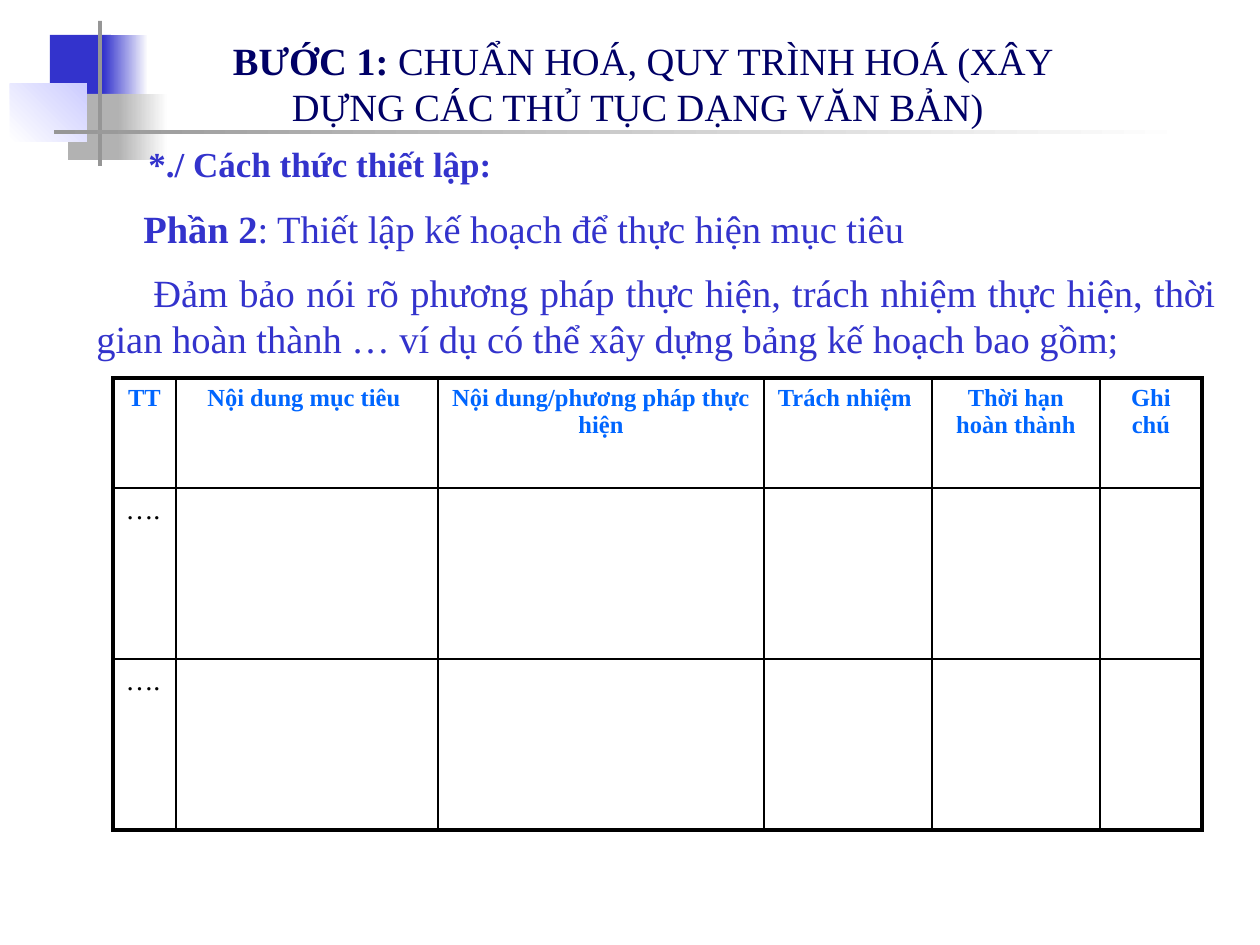
"""Builds the slide on step 1: a plan table for reaching the objectives."""
from typing import NamedTuple

from lxml import etree
from pptx import Presentation
from pptx.dml.color import RGBColor
from pptx.enum.shapes import MSO_SHAPE
from pptx.enum.text import MSO_AUTO_SIZE, PP_ALIGN
from pptx.oxml.ns import qn
from pptx.util import Emu, Pt

RECTANGLE = MSO_SHAPE.RECTANGLE
GROW = MSO_AUTO_SIZE.SHAPE_TO_FIT_TEXT
LEFT, CENTER, JUSTIFY = PP_ALIGN.LEFT, PP_ALIGN.CENTER, PP_ALIGN.JUSTIFY
FONT = "Times New Roman"
NAVY, BLUE, SKY, BLACK = "000066", "3333CC", "0066FF", "000000"
GRAY, SILVER, LAVENDER, WHITE = "969696", "B2B2B2", "CCCCFF", "FFFFFF"
THIN, THICK = Pt(1), Pt(2.25)


class Block(NamedTuple):
    left: int
    top: int
    width: int
    height: int
    start: str
    end: str = ""
    angle: int = 0


class Span(NamedTuple):
    text: str
    size: int
    color: str
    bold: bool = False


class Para(NamedTuple):
    spans: list[Span]
    align: PP_ALIGN = LEFT
    indent: int = 0
    before: int = 0


class TextBox(NamedTuple):
    left: int
    top: int
    width: int
    height: int
    paras: list[Para]
    wrap: bool = True


BLOCKS = [
    Block(50, 35, 61, 66, BLUE),
    Block(103, 35, 45, 66, BLUE, WHITE),
    Block(68, 94, 58, 66, SILVER),
    Block(118, 94, 50, 66, SILVER, WHITE),
    Block(10, 84, 77, 58, WHITE, LAVENDER, 45),
    Block(98, 21, 4, 145, GRAY),
    Block(54, 130, 1134, 4, GRAY, WHITE),
]
BODY = TextBox(84, 199, 1144, 170, [
    Para([Span("Phần 2", 22, BLUE, True),
          Span(": Thiết lập kế hoạch để thực hiện mục tiêu", 22, BLUE)], indent=47),
    Para([Span("Đảm bảo nói rõ phương pháp thực hiện, trách nhiệm thực hiện, thời gian "
               "hoàn thành … ví dụ có thể xây dựng bảng kế hoạch bao gồm;", 22, BLUE)],
         JUSTIFY, 57, 10),
])
SUBTITLE = TextBox(136, 136, 441, 64, [
    Para([Span("*./ Cách thức thiết lập:", 20, BLUE, True)]),
], wrap=False)
TITLE = TextBox(166, 31, 953, 106, [
    Para([Span("BƯỚC 1: ", 22, NAVY, True),
          Span("CHUẨN HOÁ, QUY TRÌNH HOÁ (XÂY DỰNG CÁC THỦ TỤC DẠNG VĂN BẢN) ", 22, NAVY)],
         CENTER),
])
COLUMNS = {
    "TT": 63,
    "Nội dung mục tiêu ": 262,
    "Nội dung/phương pháp thực hiện": 326,
    "Trách nhiệm ": 168,
    "Thời hạn hoàn thành": 168,
    "Ghi chú": 102,
}
ROW_HEIGHTS = [110, 171, 171]


def px(length: int) -> Emu:
    """Turn pixels at 126 to the inch into EMU."""
    return Emu(round(length * 914400 / 126))


def rgb(color: str) -> RGBColor:
    """Turn a hex string into a colour."""
    return RGBColor.from_string(color)


def draw_block(page, block: Block) -> None:
    """Draw a borderless rectangle with a plain or graded fill."""
    shape = page.shapes.add_shape(
        RECTANGLE, px(block.left), px(block.top), px(block.width), px(block.height))
    shape.shadow.inherit = False
    shape.line.fill.background()
    if block.end:
        shape.fill.gradient()
        shape.fill.gradient_angle = block.angle
        for stop, color in zip(shape.fill.gradient_stops, (block.start, block.end)):
            stop.color.rgb = rgb(color)
    else:
        shape.fill.solid()
        shape.fill.fore_color.rgb = rgb(block.start)


def write_para(paragraph, para: Para) -> None:
    """Fill a paragraph with formatted spans."""
    paragraph.alignment = para.align
    if para.before:
        paragraph.space_before = Pt(para.before)
    if para.indent:
        paragraph._p.get_or_add_pPr().set("indent", str(px(para.indent)))
    for span in para.spans:
        run = paragraph.add_run()
        run.text = span.text
        run.font.name = FONT
        run.font.size = Pt(span.size)
        run.font.bold = span.bold
        run.font.color.rgb = rgb(span.color)


def draw_text(page, box: TextBox) -> None:
    """Draw a text box with its paragraphs."""
    frame = page.shapes.add_textbox(
        px(box.left), px(box.top), px(box.width), px(box.height)).text_frame
    frame.word_wrap = box.wrap
    frame.auto_size = GROW
    for index, para in enumerate(box.paras):
        write_para(frame.add_paragraph() if index else frame.paragraphs[0], para)


def set_borders(cell, widths: dict[str, int]) -> None:
    """Give a cell black borders of the given widths."""
    properties = cell._tc.get_or_add_tcPr()
    for side, width in widths.items():
        line = etree.SubElement(properties, qn(f"a:ln{side}"), w=str(width))
        fill = etree.SubElement(line, qn("a:solidFill"))
        etree.SubElement(fill, qn("a:srgbClr"), val=BLACK)


def draw_table(page, left: int, top: int) -> None:
    """Draw the plan table with a thick outer frame."""
    last_row, last_column = len(ROW_HEIGHTS) - 1, len(COLUMNS) - 1
    table = page.shapes.add_table(
        len(ROW_HEIGHTS), len(COLUMNS), px(left), px(top),
        px(sum(COLUMNS.values())), px(sum(ROW_HEIGHTS))).table
    table.first_row = table.horz_banding = False
    for column, width in zip(table.columns, COLUMNS.values()):
        column.width = px(width)
    for r, height in enumerate(ROW_HEIGHTS):
        table.rows[r].height = px(height)
        for c, heading in enumerate(COLUMNS):
            cell = table.cell(r, c)
            set_borders(cell, {
                "L": THIN if c else THICK,
                "R": THICK if c == last_column else THIN,
                "T": THIN if r else THICK,
                "B": THICK if r == last_row else THIN,
            })
            cell.fill.background()
            paragraph = cell.text_frame.paragraphs[0]
            if r == 0:
                write_para(paragraph, Para([Span(heading, 14, SKY, True)], CENTER))
            elif c == 0:
                write_para(paragraph, Para([Span("….", 16, BLACK)]))


def main() -> None:
    """Build and save the deck."""
    deck = Presentation()
    deck.slide_width, deck.slide_height = px(1260), px(945)
    page = deck.slides.add_slide(deck.slide_layouts[6])
    for block in BLOCKS:
        draw_block(page, block)
    draw_text(page, BODY)
    draw_text(page, SUBTITLE)
    draw_table(page, 113, 378)
    draw_text(page, TITLE)
    deck.save("out.pptx")


if __name__ == "__main__":
    main()
